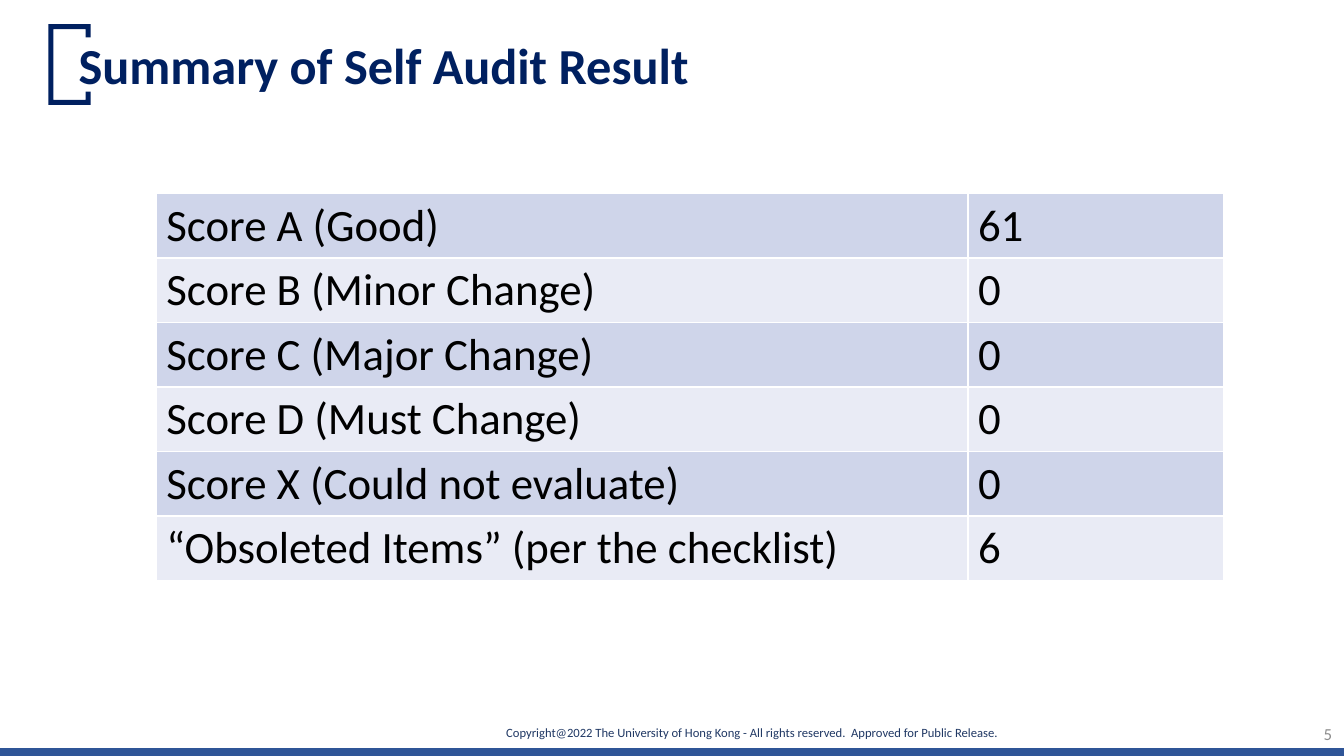
from dataclasses import dataclass

from lxml.etree import SubElement
from pptx import Presentation
from pptx.dml.color import RGBColor
from pptx.enum.text import MSO_ANCHOR as Anchor, MSO_AUTO_SIZE as AutoSize, PP_ALIGN as Align
from pptx.oxml.ns import qn
from pptx.util import Inches, Pt

TITLE = "Summary of Self Audit Result"
SCORES = [
    ("Score A (Good)", "61"),
    ("Score B (Minor Change)", "0"),
    ("Score C (Major Change)", "0"),
    ("Score D (Must Change)", "0"),
    ("Score X (Could not evaluate)", "0"),
    ("“Obsoleted Items” (per the checklist)", "6"),
]
COPYRIGHT = "Copyright@2022 The University of Hong Kong - All rights reserved.  Approved for Public Release."
PAGE_NUMBER = "5"

SLIDE_SIZE = (13.33, 7.5)
TITLE_BOX = (0.68, 0.22, 9.33, 0.91)
COPYRIGHT_BOX = (5.02, 7.1, 4.91, 0.33)
NUMBER_BOX = (10.31, 7.08, 3, 0.4)
BRACKET_BOX = (0.48, 0.24, 0.42, 0.8)
BRACKET_STROKE, BRACKET_TIP = 0.05, 0.13
TABLE_LEFT, TABLE_TOP, ROW_HEIGHT = 1.55, 1.92, 0.64
COLUMN_WIDTHS = (8.05, 2.54)
RULE_TOP = 7.46


@dataclass(frozen=True)
class Theme:
    font: str = "Calibri"
    navy: str = "002060"
    rule: str = "2F5597"
    copyright: str = "203864"
    number: str = "8C8C8C"
    cell_text: str = "000000"
    bands: tuple = ("CFD5EA", "E9EBF5")
    title_size: int = 36
    cell_size: int = 32
    number_size: int = 12
    copyright_size: int = 9
    rule_width: int = 6


THEME = Theme()


def color(value):
    return RGBColor.from_string(value)


def write(frame, text, size, ink, bold=False, align=Align.LEFT):
    """Put one formatted paragraph into a text frame."""
    frame.text = text
    paragraph = frame.paragraphs[0]
    paragraph.alignment = align
    font = paragraph.font
    font.name, font.size, font.bold = THEME.font, Pt(size), bold
    font.color.rgb = color(ink)
    return paragraph


def add_title(slide):
    """Place the title placeholder."""
    title = slide.shapes.title
    title.left, title.top, title.width, title.height = map(Inches, TITLE_BOX)
    frame = title.text_frame
    frame.auto_size = AutoSize.NONE
    frame.vertical_anchor = Anchor.MIDDLE
    paragraph = write(frame, TITLE, THEME.title_size, THEME.navy, bold=True)
    paragraph.line_spacing = 0.9


def add_bracket(slide):
    """Draw the square bracket beside the title."""
    left, top, width, height = BRACKET_BOX
    right, bottom = left + width, top + height
    inner_left, inner_right = left + BRACKET_STROKE, right - BRACKET_STROKE
    upper = [(right, top), (right, top + BRACKET_TIP), (inner_right, top + BRACKET_TIP),
             (inner_right, top + BRACKET_STROKE), (inner_left, top + BRACKET_STROKE)]
    lower = [(x, top + bottom - y) for x, y in reversed(upper)]
    points = [(Inches(x), Inches(y)) for x, y in upper + lower + [(left, bottom)]]
    builder = slide.shapes.build_freeform(Inches(left), Inches(top))
    builder.add_line_segments(points, close=True)
    bracket = builder.convert_to_shape()
    bracket.shadow.inherit = False
    bracket.fill.solid()
    bracket.fill.fore_color.rgb = color(THEME.navy)
    bracket.line.fill.background()


def add_score_table(slide):
    """Build the banded score table."""
    size = (sum(COLUMN_WIDTHS), ROW_HEIGHT * len(SCORES))
    table = slide.shapes.add_table(len(SCORES), len(COLUMN_WIDTHS),
                                   *map(Inches, (TABLE_LEFT, TABLE_TOP, *size))).table
    table.first_row = False
    for column, width in zip(table.columns, COLUMN_WIDTHS):
        column.width = Inches(width)
    for index, (row, values) in enumerate(zip(table.rows, SCORES)):
        row.height = Inches(ROW_HEIGHT)
        for cell, value in zip(row.cells, values):
            cell.fill.solid()
            cell.fill.fore_color.rgb = color(THEME.bands[index % 2])
            write(cell.text_frame, value, THEME.cell_size, THEME.cell_text)


def add_text(slide, box, text, size, ink, align=Align.LEFT):
    """Add a vertically centred text box."""
    frame = slide.shapes.add_textbox(*map(Inches, box)).text_frame
    frame.word_wrap = True
    frame.vertical_anchor = Anchor.MIDDLE
    write(frame, text, size, ink, align=align)
    return frame


def add_footer(slide):
    """Add the copyright line, bottom rule and page number."""
    frame = add_text(slide, COPYRIGHT_BOX, COPYRIGHT, THEME.copyright_size, THEME.copyright)
    frame.margin_left = frame.margin_right = frame.margin_top = frame.margin_bottom = 0
    ends = (0, RULE_TOP, SLIDE_SIZE[0], RULE_TOP)
    rule = slide.shapes.add_connector(1, *map(Inches, ends))
    rule.line.color.rgb = color(THEME.rule)
    rule.line.width = Pt(THEME.rule_width)
    SubElement(rule._element.spPr, qn("a:effectLst"))
    add_text(slide, NUMBER_BOX, PAGE_NUMBER, THEME.number_size, THEME.number, Align.RIGHT)


def main():
    """Build and save the slide."""
    presentation = Presentation()
    presentation.slide_width, presentation.slide_height = map(Inches, SLIDE_SIZE)
    slide = presentation.slides.add_slide(presentation.slide_layouts[5])
    add_footer(slide)
    add_title(slide)
    add_bracket(slide)
    add_score_table(slide)
    presentation.save("out.pptx")


if __name__ == "__main__":
    main()
